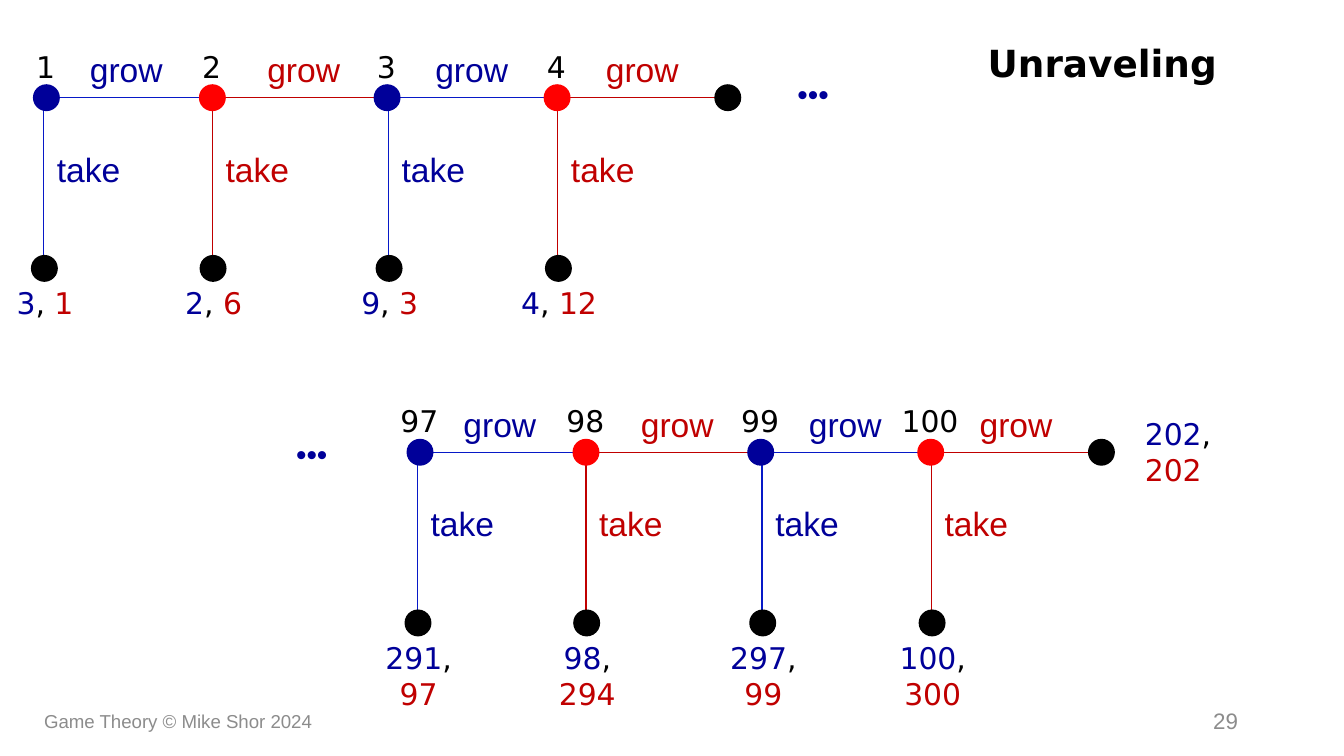
from dataclasses import dataclass

from lxml import etree
from pptx import Presentation
from pptx.dml.color import RGBColor
from pptx.enum.shapes import MSO_CONNECTOR, MSO_SHAPE
from pptx.enum.text import MSO_ANCHOR, PP_ALIGN
from pptx.oxml.ns import qn
from pptx.util import Inches, Pt

LEFT, MID, RIGHT = PP_ALIGN.LEFT, PP_ALIGN.CENTER, PP_ALIGN.RIGHT
TOP, MIDDLE = MSO_ANCHOR.TOP, MSO_ANCHOR.MIDDLE
OVAL = MSO_SHAPE.OVAL
STRAIGHT = MSO_CONNECTOR.STRAIGHT

CELL = Inches(0.1)
COLS, ROWS = 100, 56.25
DOT = 1.9
BLUE, RED, BLACK, GRAY = "000099", "C00000", "000000", "8C8C8C"
SANS, WIDE = "Arial", "DejaVu Sans"


@dataclass(frozen=True)
class Player:
    ink: str
    dot: str
    line: str


@dataclass(frozen=True)
class Stop:
    col: float
    drop: float
    grow: float
    player: Player


@dataclass(frozen=True)
class Chain:
    col: float
    row: float
    first: int
    pays: tuple[tuple[int, int], ...]
    tall: float


ODD = Player(BLUE, BLUE, "0719C7")
EVEN = Player(RED, "FF0000", RED)
STOPS = (
    Stop(3.45, 3.25, 5.7, ODD),
    Stop(15.8, 15.8, 18.9, EVEN),
    Stop(28.8, 28.9, 31.4, ODD),
    Stop(41.45, 41.5, 44.1, EVEN),
)
LAST = 54.15
CHAINS = (
    Chain(0, 7.27, 1, ((3, 1), (2, 6), (9, 3), (4, 12)), 3.7),
    Chain(27.8, 33.65, 97, ((291, 97), (98, 294), (297, 99), (100, 300)), 6.4),
)


def size(cells: float) -> int:
    return round(cells * CELL)


def hue(code: str) -> RGBColor:
    return RGBColor.from_string(code)


def write(shapes, text, col: float, row: float, wide: float, tall: float, *,
          font: str = SANS, pts: float = 18, ink: str = BLACK,
          bold: bool = False, align=LEFT, anchor=TOP, pad: float = 0.5) -> None:
    box = shapes.add_textbox(size(col), size(row), size(wide), size(tall))
    frame = box.text_frame
    frame.word_wrap = True
    frame.vertical_anchor = anchor
    frame.margin_top = frame.margin_bottom = size(pad)
    line = frame.paragraphs[0]
    line.alignment = align
    parts = ((text, ink),) if isinstance(text, str) else text
    for part, shade in parts:
        run = line.add_run()
        run.text = part
        run.font.name = font
        run.font.size = Pt(pts)
        run.font.bold = bold
        run.font.color.rgb = hue(shade)


def link(shapes, start: tuple[float, float], end: tuple[float, float], ink: str) -> None:
    line = shapes.add_connector(STRAIGHT, *map(size, start + end))
    line.line.color.rgb = hue(ink)
    line.line.width = Pt(0.75)
    etree.SubElement(line._element.spPr, qn("a:effectLst"))


def spot(shapes, col: float, row: float, ink: str) -> None:
    dot = shapes.add_shape(OVAL, size(col - DOT / 2), size(row - DOT / 2), size(DOT), size(DOT))
    dot.shadow.inherit = False
    dot.fill.solid()
    dot.fill.fore_color.rgb = hue(ink)
    dot.line.color.rgb = hue(ink)
    dot.line.width = Pt(0.75)


def score(pay: tuple[int, int]) -> tuple[tuple[str, str], ...]:
    return (str(pay[0]), BLUE), (", ", BLACK), (str(pay[1]), RED)


def draw(shapes, chain: Chain) -> None:
    row = chain.row
    ends = [stop.col for stop in STOPS[1:]] + [LAST]
    for step, (stop, end, pay) in enumerate(zip(STOPS, ends, chain.pays)):
        col, drop, who = chain.col + stop.col, chain.col + stop.drop, stop.player
        link(shapes, (col + 0.6, row), (chain.col + end - 0.3, row), who.line)
        link(shapes, (drop, row + 0.5), (drop, row + 12), who.line)
        spot(shapes, col, row, who.dot)
        spot(shapes, drop + 0.05, row + 12.7, BLACK)
        write(shapes, "grow", chain.col + stop.grow, row - 4.1, 7.9, 4, ink=who.ink)
        write(shapes, "take", drop, row + 3.3, 7.9, 4, ink=who.ink)
        write(shapes, str(chain.first + step), col - 3.5, row - 4.15, 6.9, 3.7,
              font=WIDE, pts=16, align=MID)
        write(shapes, score(pay), drop - 4.4, row + 13.45, 9, chain.tall,
              font=WIDE, pts=16, align=MID)
    spot(shapes, chain.col + LAST, row, BLACK)


def main() -> None:
    deck = Presentation()
    deck.slide_width, deck.slide_height = size(COLS), size(ROWS)
    slide = deck.slides.add_slide(deck.slide_layouts[6])
    shapes = slide.shapes
    write(shapes, "Unraveling", 72.5, 2.25, 23.7, 4.8, font=WIDE, pts=20,
          bold=True, anchor=MIDDLE, pad=1)
    write(shapes, "Game Theory © Mike Shor 2024", 2.3, 52.15, 33.8, 3,
          pts=10, ink=GRAY, anchor=MIDDLE)
    write(shapes, "29", 70.6, 52.15, 22.5, 3, pts=12, ink=GRAY,
          align=RIGHT, anchor=MIDDLE)
    for chain in CHAINS:
        draw(shapes.add_group_shape().shapes, chain)
    for col, row in ((55.6, 5.15), (18.3, 31.9)):
        write(shapes, "•••", col, row, 9.8, 3.7, pts=16, ink=BLUE, align=MID)
    write(shapes, score((202, 202)), 84.2, 30.45, 9.6, 6.4, font=WIDE, pts=16)
    deck.save("out.pptx")


if __name__ == "__main__":
    main()
